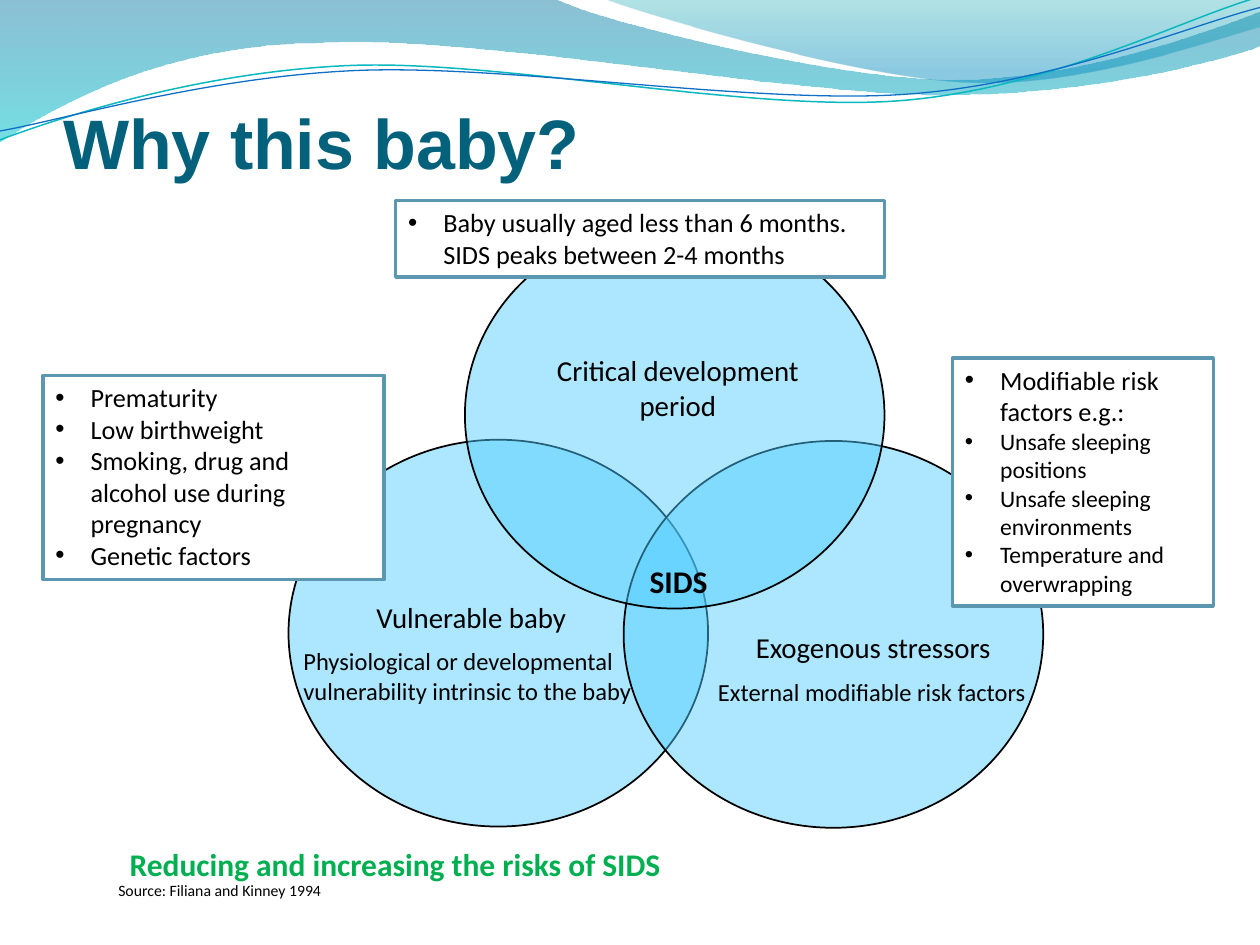
from math import cos, radians, sin

from lxml.etree import SubElement
from pptx import Presentation
from pptx.dml.color import RGBColor
from pptx.enum.shapes import MSO_SHAPE
from pptx.enum.text import MSO_ANCHOR, MSO_AUTO_SIZE, PP_ALIGN
from pptx.oxml import parse_xml
from pptx.oxml.ns import nsdecls, qn
from pptx.util import Inches, Pt

COLORS = {"title": "04617B", "text": "000000", "circle": "4FCEFF", "frame": "5B97B1",
          "white": "FFFFFF", "green": "00B050", "teal line": "0AB8BF", "blue line": "0F6FC6"}

# Header waves: a start point, then points (2 numbers) or Bezier curves (6 numbers)
WAVES = [
    {"start": (0, -0.01),
     "steps": [(4.4, -0.01), (4.76, 0.17, 6.64, 0.63, 7.58, 0.63),
               (8.53, 0.63, 9.58, 0.26, 10, 0.09), (10.01, 0.36),
               (9.83, 0.44, 8.7, 0.76, 7.46, 0.75), (6.22, 0.75, 3.82, 0.28, 2.57, 0.34),
               (1.29, 0.35, 0.46, 0.83, -0.01, 1.13)],
     "stops": [(0, "0074A1", 45), (100, "00C6CF", 55)]},
    {"start": (4.79, -0.01),
     "steps": [(5.09, 0.11, 6.82, 0.62, 7.69, 0.65), (8.56, 0.69, 9.61, 0.32, 10, 0.21),
               (10, 0)],
     "stops": [(0, "00A1A9", 30), (80, "008BBF", 45)]},
    {"start": (0, 1.11),
     "steps": [(0.48, 0.93, 1.58, 0.57, 2.77, 0.52), (3.95, 0.47, 5.93, 0.89, 7.13, 0.8),
               (8.33, 0.71, 9.38, 0.15, 9.98, -0.02)],
     "line": ("teal line", 0.85), "pivot": (4.99, 0.58)},
    {"start": (0, 1.04),
     "steps": [(0.47, 0.96, 1.64, 0.61, 2.83, 0.56), (4.03, 0.51, 5.97, 0.83, 7.17, 0.75),
               (8.36, 0.67, 9.41, 0.21, 10, 0.06)],
     "line": ("blue line", 0.75), "pivot": (5, 0.59)},
]
LINE_TILT = -2.7

CIRCLE_SIZE = (3.33, 3.07)
CIRCLES = [(2.29, 3.49), (4.95, 3.5), (3.69, 1.76)]

# Labels: place, then paragraphs of (text, size), then format
LABELS = [
    ((4.94, 4.41, 0.89, 0.4), [("SIDS", 18)], {"bold": True, "centered": 1}),
    ((4.31, 2.75, 2.14, 0.66), [("Critical development", 16.5), ("period", 16.5)],
     {"centered": 2}),
    ((2.31, 4.71, 2.86, 0.97),
     [("Vulnerable baby", 16.5),
      ("Physiological or developmental vulnerability intrinsic to the baby", 14)],
     {"centered": 1, "gap": 7}),
    ((5.6, 4.95, 2.66, 0.73),
     [("Exogenous stressors", 16.5), ("External modifiable risk factors", 14)],
     {"centered": 1, "gap": 7}),
    ((0.84, 6.94, 2.72, 0.25), [("Source: Filiana and Kinney 1994", 9)], {}),
    ((0.93, 6.66, 5.41, 0.4), [("Reducing and increasing the risks of SIDS", 18)],
     {"bold": True, "color": "green"}),
]

FACTORS = [
    ((3.14, 1.59, 3.88, 0.61),
     [("Baby usually aged less than 6 months. SIDS peaks between 2-4 months", 15)]),
    ((0.34, 2.98, 2.71, 1.62),
     [("Prematurity", 15), ("Low birthweight", 15),
      ("Smoking, drug and alcohol use during pregnancy", 15), ("Genetic factors", 15)]),
    ((7.56, 2.84, 2.07, 1.97),
     [("Modifiable risk factors e.g.:", 15), ("Unsafe sleeping positions", 13.5),
      ("Unsafe sleeping environments", 13.5), ("Temperature and overwrapping", 13.5)]),
]


def rgb(name):
    return RGBColor.from_string(COLORS[name])


def lengths(values):
    return [Inches(value) for value in values]


def turn(point, pivot, degrees):
    """Turn a point clockwise about the pivot."""
    angle = radians(degrees)
    x, y = point[0] - pivot[0], point[1] - pivot[1]
    return (pivot[0] + x * cos(angle) - y * sin(angle),
            pivot[1] + x * sin(angle) + y * cos(angle))


def bend(wave, steps):
    """Join each three straight segments of a curve step into one Bezier segment."""
    segments = iter(list(wave.element.iter(qn("a:lnTo"))))
    for step in steps:
        first, *others = [next(segments) for _ in range(len(step) // 2)]
        if others:
            first.tag = qn("a:cubicBezTo")
            for other in others:
                first.append(other[0])
                other.getparent().remove(other)


def add_wave(page, start, steps, stops=None, line=None, pivot=None):
    points = [start] + [step[i:i + 2] for step in steps for i in range(0, len(step), 2)]
    if pivot:
        points = [turn(point, pivot, -LINE_TILT) for point in points]
    points = [lengths(point) for point in points]
    builder = page.shapes.build_freeform(*points[0])
    builder.add_line_segments(points[1:], close=stops is not None)
    wave = builder.convert_to_shape()
    bend(wave, steps)
    wave.shadow.inherit = False
    wave.fill.background()
    if line:
        wave.rotation = LINE_TILT
        wave.line.color.rgb = rgb(line[0])
        wave.line.width = Pt(line[1])
        return
    wave.line.fill.background()
    stop_xml = "".join(
        f'<a:gs pos="{pos * 1000}"><a:srgbClr val="{color}">'
        f'<a:alpha val="{alpha * 1000}"/></a:srgbClr></a:gs>' for pos, color, alpha in stops)
    gradient = parse_xml(f'<a:gradFill {nsdecls("a")}><a:gsLst>{stop_xml}</a:gsLst>'
                         '<a:lin ang="5400000" scaled="0"/></a:gradFill>')
    properties = wave.element.spPr
    properties.replace(properties.find(qn("a:noFill")), gradient)


def add_panel(page, kind, place, fill, line, width):
    panel = page.shapes.add_shape(kind, *lengths(place))
    panel.shadow.inherit = False
    panel.fill.solid()
    panel.fill.fore_color.rgb = rgb(fill)
    panel.line.color.rgb = rgb(line)
    panel.line.width = Pt(width)
    return panel


def write(frame, items, font="Calibri", color="text", bold=False, centered=0, gap=0,
          bullets=False, grow=True):
    """Write (text, size) paragraphs; the first `centered` ones are centred."""
    frame.word_wrap = True
    frame.auto_size = MSO_AUTO_SIZE.SHAPE_TO_FIT_TEXT if grow else MSO_AUTO_SIZE.NONE
    for i, (text, size) in enumerate(items):
        para = frame.paragraphs[0] if i == 0 else frame.add_paragraph()
        para.alignment = PP_ALIGN.CENTER if i < centered else PP_ALIGN.LEFT
        if i and gap:
            para.space_before = Pt(gap)
        if bullets:
            properties = para._p.get_or_add_pPr()
            properties.set("marL", str(Inches(0.28)))
            properties.set("indent", str(-Inches(0.28)))
            SubElement(properties, qn("a:buFont"), typeface="Arial")
            SubElement(properties, qn("a:buChar"), char="•")
        span = para.add_run()
        span.text = text
        span.font.name = font
        span.font.size = Pt(size)
        span.font.bold = bold
        span.font.color.rgb = rgb(color)


def main():
    deck = Presentation()
    deck.slide_width, deck.slide_height = Inches(10), Inches(7.5)
    page = deck.slides.add_slide(deck.slide_layouts[5])

    # Header waves
    for wave in WAVES:
        add_wave(page, **wave)

    # Title
    title = page.shapes.title
    title.left, title.top, title.width, title.height = lengths((0.5, 0.87, 7.62, 0.59))
    frame = title.text_frame
    frame.margin_left = frame.margin_right = frame.margin_bottom = 0
    frame.vertical_anchor = MSO_ANCHOR.BOTTOM
    write(frame, [("Why this baby?", 40)], font="Arial", color="title", bold=True, grow=False)

    # Overlapping circles
    for corner in CIRCLES:
        circle = add_panel(page, MSO_SHAPE.OVAL, corner + CIRCLE_SIZE, "circle", "text", 1)
        fill_color = circle.element.spPr.find(qn("a:solidFill"))[0]
        SubElement(fill_color, qn("a:alpha"), val="47000")

    # Labels
    for place, items, style in LABELS:
        box = page.shapes.add_textbox(*lengths(place))
        write(box.text_frame, items, **style)

    # Framed risk factors
    for place, items in FACTORS:
        panel = add_panel(page, MSO_SHAPE.RECTANGLE, place, "white", "frame", 2)
        panel.text_frame.vertical_anchor = MSO_ANCHOR.TOP
        write(panel.text_frame, items, bullets=True)

    deck.save("out.pptx")


if __name__ == "__main__":
    main()
